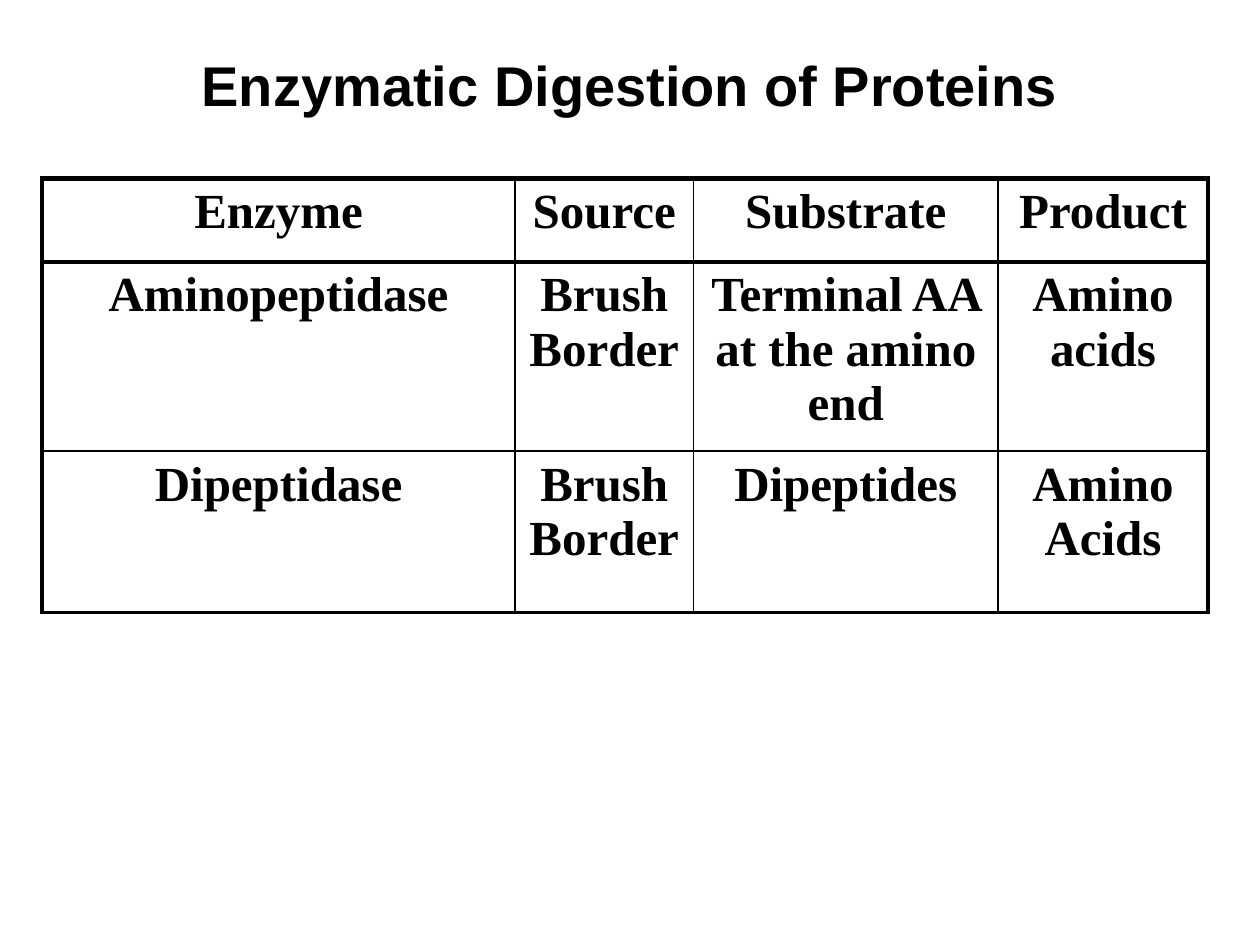
import pptx
import pptx.util
import pptx.dml.color
import pptx.enum.text
import pptx.oxml
import pptx.oxml.ns

Cm, Pt = pptx.util.Cm, pptx.util.Pt
COLORS = {"ink": "000000"}
ROWS = [
    ["Enzyme", "Source", "Substrate", "Product"],
    ["Aminopeptidase", "Brush Border", "Terminal AA at the amino end", "Amino acids"],
    ["Dipeptidase", "Brush Border", "Dipeptides", "Amino Acids"],
]
COL_WIDTHS = [9.53, 3.6, 6.14, 4.23]
ROW_HEIGHTS = [1.68, 3.25, 3.25]
THICK, OUTER, THIN = 3, 2.25, 1


def write(tf, text, font, size, color="ink", bold=True):
    tf.word_wrap = True
    p = tf.paragraphs[0]
    p.alignment = pptx.enum.text.PP_ALIGN.CENTER
    r = p.add_run()
    r.text = text
    r.font.name = font
    r.font.size = Pt(size)
    r.font.bold = bold
    r.font.color.rgb = pptx.dml.color.RGBColor.from_string(COLORS[color])


def set_borders(cell, **widths):
    tcPr = cell._tc.get_or_add_tcPr()
    for i, side in enumerate("LRTB"):
        tcPr.insert(i, pptx.oxml.parse_xml(
            f'<a:ln{side} {pptx.oxml.ns.nsdecls("a")} w="{Pt(widths[side])}">'
            f'<a:solidFill><a:srgbClr val="{COLORS["ink"]}"/></a:solidFill>'
            f'</a:ln{side}>'))


def add_title(s, left, top, width, height):
    tf = s.shapes.add_textbox(Cm(left), Cm(top), Cm(width), Cm(height)).text_frame
    tf.vertical_anchor = pptx.enum.text.MSO_ANCHOR.MIDDLE
    write(tf, "Enzymatic Digestion of Proteins", font="Arial", size=32)


def add_enzyme_table(s, left, top):
    n_rows, n_cols = len(ROWS), len(COL_WIDTHS)
    table = s.shapes.add_table(n_rows, n_cols, Cm(left), Cm(top),
                               Cm(sum(COL_WIDTHS)), Cm(sum(ROW_HEIGHTS))).table
    table.first_row = table.horz_banding = False
    for col, width in zip(table.columns, COL_WIDTHS):
        col.width = Cm(width)
    for row, height in zip(table.rows, ROW_HEIGHTS):
        row.height = Cm(height)
    for i, texts in enumerate(ROWS):
        edge = THICK if i == 0 else OUTER
        above = THICK if i < 2 else THIN
        below = THICK if i == 0 else OUTER if i == n_rows - 1 else THIN
        for j, text in enumerate(texts):
            cell = table.cell(i, j)
            cell.fill.background()
            write(cell.text_frame, text, font="Times New Roman", size=28)
            set_borders(cell, L=edge if j == 0 else THIN,
                        R=edge if j == n_cols - 1 else THIN, T=above, B=below)


def main():
    prs = pptx.Presentation()
    prs.slide_width, prs.slide_height = Cm(25.4), Cm(19.05)
    s = prs.slides.add_slide(prs.slide_layouts[6])
    add_title(s, 1.06, 0.85, 23.28, 1.69)
    add_enzyme_table(s, 0.85, 3.6)
    prs.save("out.pptx")


if __name__ == "__main__":
    main()
